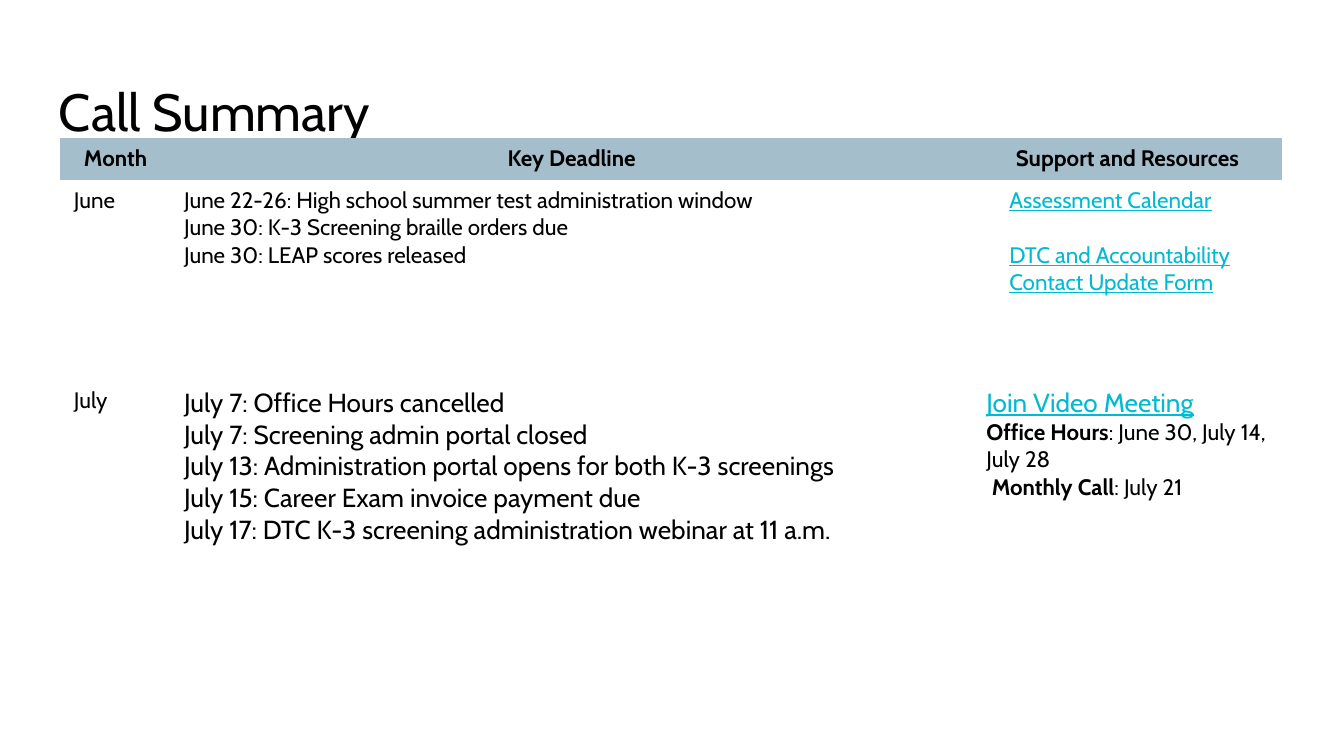
from dataclasses import dataclass

from pptx import Presentation
from pptx.dml.color import RGBColor
from pptx.enum.text import MSO_ANCHOR, PP_ALIGN
from pptx.oxml.ns import qn
from pptx.util import Inches, Pt


@dataclass(frozen=True)
class Theme:
    font: str = "Cabin"
    ink: str = "000000"
    link: str = "00BAD2"
    header: str = "A4BECC"
    title: int = 28
    large: int = 14
    body: int = 12
    plain_table: str = "{2D5ABB26-0587-4C30-8999-92F81FD0307C}"


THEME = Theme()


@dataclass(frozen=True)
class Run:
    text: str
    size: int = THEME.body
    bold: bool = False
    link: bool = False


@dataclass(frozen=True)
class Para:
    runs: tuple[Run, ...]
    indent: float = 0
    before: float = 0
    align: PP_ALIGN = PP_ALIGN.LEFT


def line(text: str, indent: float = 0, before: float = 0,
         align: PP_ALIGN = PP_ALIGN.LEFT, **fmt) -> Para:
    return Para((Run(text, **fmt),), indent, before, align)


def write(tf, paras: list[Para]) -> None:
    for i, para in enumerate(paras):
        p = tf.paragraphs[0] if i == 0 else tf.add_paragraph()
        p.alignment = para.align
        if para.indent:
            p._p.get_or_add_pPr().set("marL", str(Inches(para.indent)))
        if para.before:
            p.space_before = Pt(para.before)
        for run in para.runs:
            r = p.add_run()
            r.text = run.text
            fmt = {"name": THEME.font, "size": Pt(run.size),
                   "bold": run.bold, "underline": run.link}
            for name, value in fmt.items():
                setattr(r.font, name, value)
            color = THEME.link if run.link else THEME.ink
            r.font.color.rgb = RGBColor.from_string(color)


def add_title(s, text: str) -> None:
    sp = s.shapes.add_textbox(Inches(0.34), Inches(0.49), Inches(9.32), Inches(0.63))
    tf = sp.text_frame
    fmt = {"word_wrap": True, "vertical_anchor": MSO_ANCHOR.TOP}
    fmt |= {f"margin_{side}": Inches(0.1) for side in ("left", "right", "top", "bottom")}
    for name, value in fmt.items():
        setattr(tf, name, value)
    write(tf, [line(text, size=THEME.title)])


def add_schedule(s, rows: list[list[list[Para]]]) -> None:
    widths, heights = (0.82, 5.97, 2.3), (0.31, 1.49, 1.44)
    table = s.shapes.add_table(
        len(rows), len(widths), Inches(0.45), Inches(1.03),
        Inches(sum(widths)), Inches(sum(heights))).table
    table._tbl.tblPr.find(qn("a:tableStyleId")).text = THEME.plain_table
    table.horz_banding = False
    for column, width in zip(table.columns, widths):
        column.width = Inches(width)
    for i, (row, height) in enumerate(zip(rows, heights)):
        table.rows[i].height = Inches(height)
        for j, paras in enumerate(row):
            cell = table.cell(i, j)
            if i == 0:
                cell.fill.solid()
                cell.fill.fore_color.rgb = RGBColor.from_string(THEME.header)
            else:
                cell.fill.background()
            write(cell.text_frame, paras)


HEADERS = ("Month", "Key Deadline", "Support and Resources")
JUNE = (
    "June 22-26: High school summer test administration window",
    "June 30: K-3 Screening braille orders due",
    "June 30: LEAP scores released",
)
JULY = (
    "July 7: Office Hours cancelled",
    "July 7: Screening admin portal closed",
    "July 13: Administration portal opens for both K-3 screenings",
    "July 15: Career Exam invoice payment due",
    "July 17: DTC K-3 screening administration webinar at 11 a.m.",
)
JUNE_LINKS = [
    line("Assessment Calendar", indent=0.17, link=True),
    line("DTC and Accountability Contact Update Form",
         indent=0.17, before=14.6, link=True),
]
JULY_CALLS = [
    line("Join Video Meeting", size=THEME.large, link=True),
    Para((Run("Office Hours", bold=True), Run(": June 30, July 14, July 28"))),
    Para((Run("Monthly Call", bold=True), Run(": July 21")), indent=0.04),
]


def main() -> None:
    prs = Presentation()
    prs.slide_width = Inches(10)
    prs.slide_height = prs.slide_width * 9 // 16
    s = prs.slides.add_slide(prs.slide_layouts[6])
    add_title(s, "Call Summary")
    add_schedule(s, [
        [[line(h, align=PP_ALIGN.CENTER, bold=True)] for h in HEADERS],
        [[line("June")], [line(t) for t in JUNE], JUNE_LINKS],
        [[line("July")], [line(t, size=THEME.large) for t in JULY], JULY_CALLS],
    ])
    prs.save("out.pptx")


if __name__ == "__main__":
    main()
